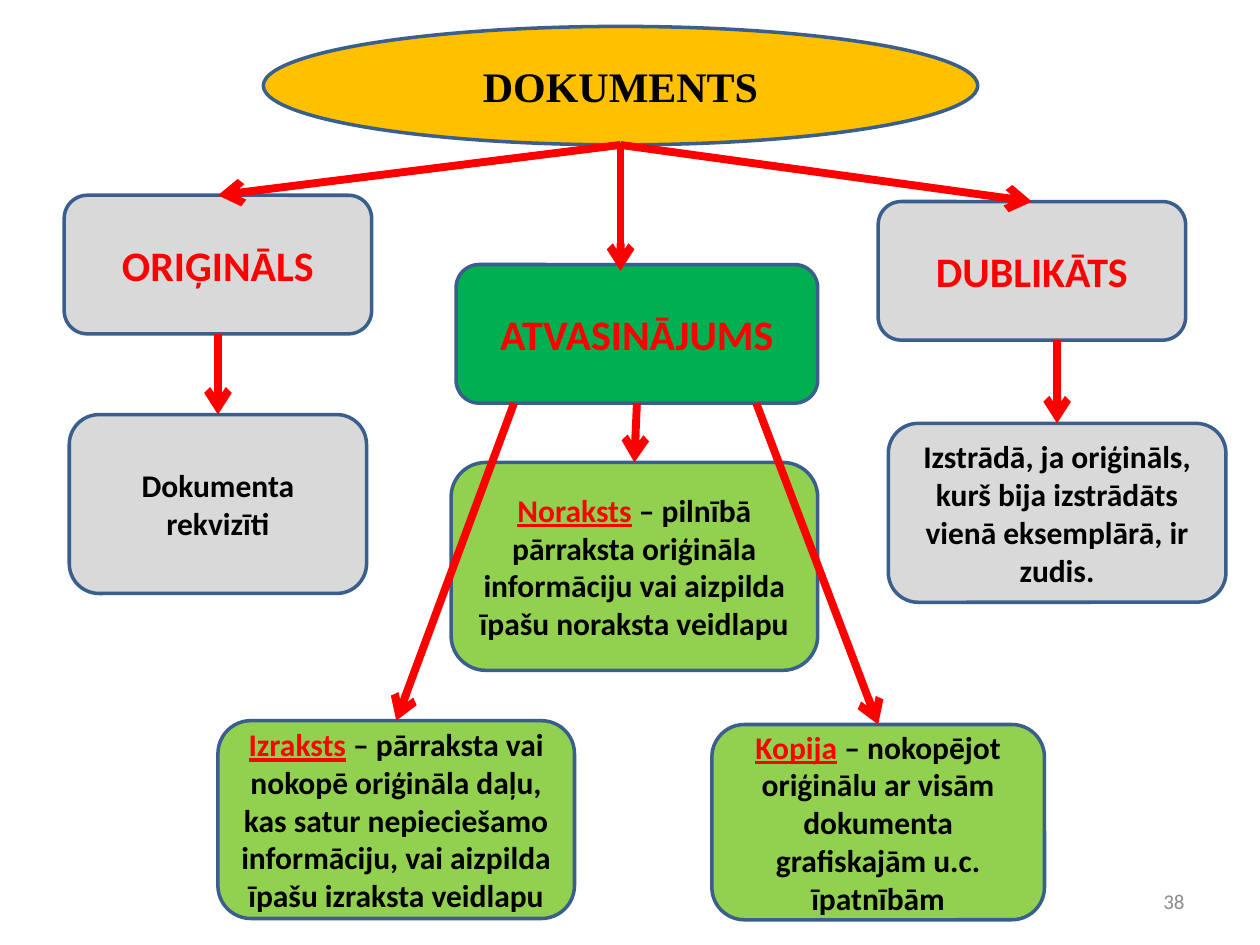
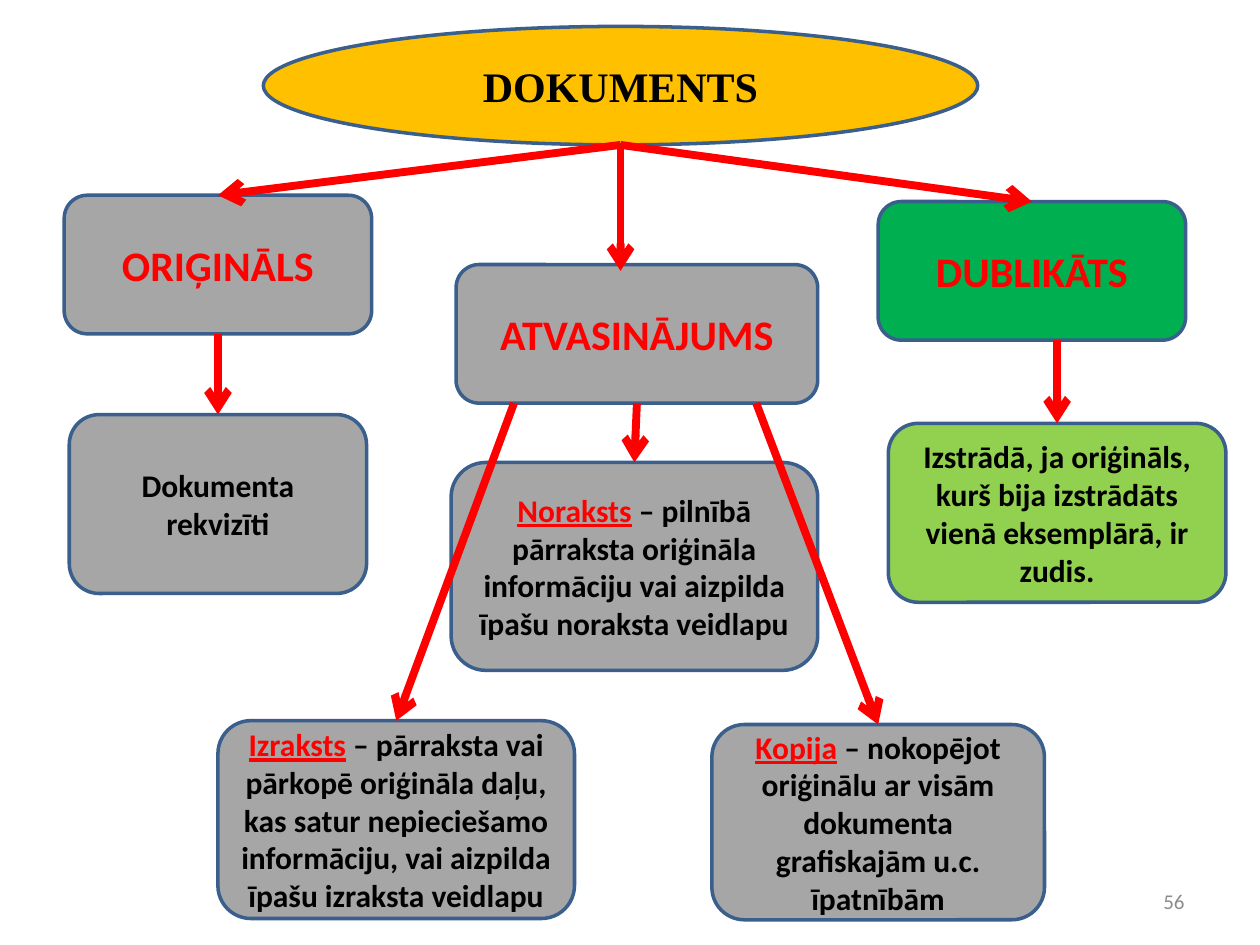
from dataclasses import dataclass

from lxml import etree
from pptx import Presentation
from pptx.dml.color import RGBColor
from pptx.enum.shapes import MSO_CONNECTOR, MSO_SHAPE
from pptx.enum.text import MSO_ANCHOR, PP_ALIGN
from pptx.oxml.ns import qn
from pptx.util import Inches, Pt

OVAL, ROUNDED = MSO_SHAPE.OVAL, MSO_SHAPE.ROUNDED_RECTANGLE
NOTE = MSO_SHAPE.FLOWCHART_ALTERNATE_PROCESS
STRAIGHT = MSO_CONNECTOR.STRAIGHT
MIDDLE = MSO_ANCHOR.MIDDLE
CENTER, RIGHT = PP_ALIGN.CENTER, PP_ALIGN.RIGHT

SLIDE_WIDTH, SLIDE_HEIGHT = Inches(10), Inches(7.5)
COLUMN, ROW = SLIDE_WIDTH / 100, SLIDE_HEIGHT / 75


@dataclass(frozen=True)
class Theme:
    """Colours, fonts and sizes shared by the slides."""
    root: str = "FFC000"
    active: str = "00B050"
    active_note: str = "92D050"
    outline: str = "3A5F8C"
    accent: str = "FF0000"
    ink: str = "000000"
    number: str = "8C8C8C"
    body_font: str = "Calibri"
    root_font: str = "Times New Roman"
    heading_size: int = 24
    note_size: int = 18
    number_size: int = 12
    outline_width: float = 2
    arrow_width: float = 4.5


THEME = Theme()
ROOT_STYLE = {"name": THEME.root_font, "size": Pt(THEME.heading_size), "bold": True}
HEADING_STYLE = {**ROOT_STYLE, "name": THEME.body_font}
NOTE_STYLE = {**HEADING_STYLE, "size": Pt(THEME.note_size)}
TERM_STYLE = {**NOTE_STYLE, "underline": True}
NUMBER_STYLE = {"name": THEME.body_font, "size": Pt(THEME.number_size)}


@dataclass(frozen=True)
class Box:
    """A rectangle measured in grid columns and rows."""
    left: float
    top: float
    width: float
    height: float

    def inner(self, left, top, width, height):
        """Return a box offset from this box's corner."""
        return Box(self.left + left, self.top + top, width, height)

    def point(self, across, down):
        """Return the point at the given shares of the box."""
        return self.left + across * self.width, self.top + down * self.height

    def emu(self):
        """Return the box in slide units."""
        return (round(self.left * COLUMN), round(self.top * ROW),
                round(self.width * COLUMN), round(self.height * ROW))


def write(frame, runs, align=CENTER):
    """Write runs of (text, colour, style) as one paragraph."""
    frame.word_wrap = True
    frame.vertical_anchor = MIDDLE
    paragraph = frame.paragraphs[0]
    paragraph.alignment = align
    for text, colour, style in runs:
        run = paragraph.add_run()
        run.text = text
        run.font.color.rgb = RGBColor.from_string(colour)
        for attribute, value in style.items():
            setattr(run.font, attribute, value)


def node(slide, box, outline, fill, runs):
    """Draw an outlined node of the tree."""
    shape = slide.shapes.add_shape(outline, *box.emu())
    shape.shadow.inherit = False
    shape.fill.solid()
    shape.fill.fore_color.rgb = RGBColor.from_string(fill)
    shape.line.color.rgb = RGBColor.from_string(THEME.outline)
    shape.line.width = Pt(THEME.outline_width)
    write(shape.text_frame, runs)
    return box


def heading(slide, box, fill, text):
    """Draw the heading of a branch."""
    return node(slide, box, ROUNDED, fill, [(text, THEME.accent, HEADING_STYLE)])


def note(slide, box, fill, text, term=""):
    """Draw an explanation, opened by a term if there is one."""
    runs = [(term, THEME.accent, TERM_STYLE)] if term else []
    return node(slide, box, NOTE, fill, runs + [(text, THEME.ink, NOTE_STYLE)])


def arrow(slide, start, tip):
    """Draw a red arrow between two grid points."""
    ends = [round(value * unit) for point in (start, tip)
            for value, unit in zip(point, (COLUMN, ROW))]
    connector = slide.shapes.add_connector(STRAIGHT, *ends)
    connector.line.color.rgb = RGBColor.from_string(THEME.accent)
    connector.line.width = Pt(THEME.arrow_width)
    etree.SubElement(connector.line._get_or_add_ln(), qn("a:tailEnd"), type="arrow")
    etree.SubElement(connector._element.spPr, qn("a:effectLst"))


def single_branch(slide, box, fills, title, text, note_box):
    """Draw a heading with one explanation below it."""
    head = heading(slide, box.inner(0, 0, 24.4, 11), fills[0], title)
    detail = note(slide, box.inner(*note_box), fills[1], text)
    tip = detail.point(0.5, 0)
    arrow(slide, (tip[0], head.point(0, 1)[1]), tip)
    return head


def derivative_branch(slide, box, fills, extract_verb):
    """Draw the derivative heading with its three kinds."""
    head = heading(slide, box.inner(18.9, 0, 28.7, 11), fills[0], "ATVASINĀJUMS")
    kinds = [
        ("Noraksts", " – pilnībā pārraksta oriģināla informāciju vai aizpilda "
         "īpašu noraksta veidlapu", (18.5, 15.7, 29.1, 16.5), 0.5),
        ("Izraksts", f" – pārraksta vai {extract_verb} oriģināla daļu, kas satur "
         "nepieciešamo informāciju, vai aizpilda īpašu izraksta veidlapu",
         (0, 36.2, 28.3, 15.7), 0.16),
        ("Kopija", " – nokopējot oriģinālu ar visām dokumenta grafiskajām u.c. "
         "īpatnībām", (39.2, 36.5, 26.4, 15.5), 0.83),
    ]
    links = []
    for term, text, place, share in kinds:
        kind = note(slide, box.inner(*place), fills[1], text, term)
        links.append((head.point(share, 1), kind.point(0.5, 0)))
    for start, tip in links:
        arrow(slide, start, tip)
    return head


def page_number(slide, box, number):
    """Write the slide number at the lower right."""
    frame = slide.shapes.add_textbox(*box.emu()).text_frame
    write(frame, [(number, THEME.number, NUMBER_STYLE)], RIGHT)


def document_slide(deck, muted, active, extract_verb, number):
    """Build a document tree with one branch highlighted."""
    slide = deck.slides.add_slide(deck.slide_layouts[6])
    fills = {branch: (muted, muted) for branch in ("original", "derivative", "duplicate")}
    fills[active] = (THEME.active, THEME.active_note)

    root = node(slide, Box(20.9, 2.1, 56.7, 9.4), OVAL, THEME.root,
                [("DOKUMENTS", THEME.ink, ROOT_STYLE)])
    original = single_branch(
        slide, Box(5.1, 15.5, 24.4, 31.6), fills["original"], "ORIĢINĀLS",
        "Dokumenta rekvizīti", (0.4, 17.4, 23.6, 14.2))
    derivative = derivative_branch(
        slide, Box(17.3, 21, 65.6, 52), fills["derivative"], extract_verb)
    duplicate = single_branch(
        slide, Box(69.7, 16, 27.6, 31.8), fills["duplicate"], "DUBLIKĀTS",
        "Izstrādā, ja oriģināls, kurš bija izstrādāts vienā eksemplārā, ir zudis.",
        (0.8, 17.6, 26.8, 14.2))

    origin = root.point(0.5, 1)
    for tip in ((origin[0], derivative.top + 0.5),
                original.point(0.5, 0), duplicate.point(0.5, 0)):
        arrow(slide, origin, tip)
    page_number(slide, Box(71.7, 69.5, 23.3, 4), number)


def main():
    """Build and save the deck."""
    deck = Presentation()
    deck.slide_width, deck.slide_height = SLIDE_WIDTH, SLIDE_HEIGHT
    document_slide(deck, "D9D9D9", "derivative", "nokopē", "38")
    document_slide(deck, "A6A6A6", "duplicate", "pārkopē", "56")
    deck.save("out.pptx")


if __name__ == "__main__":
    main()
